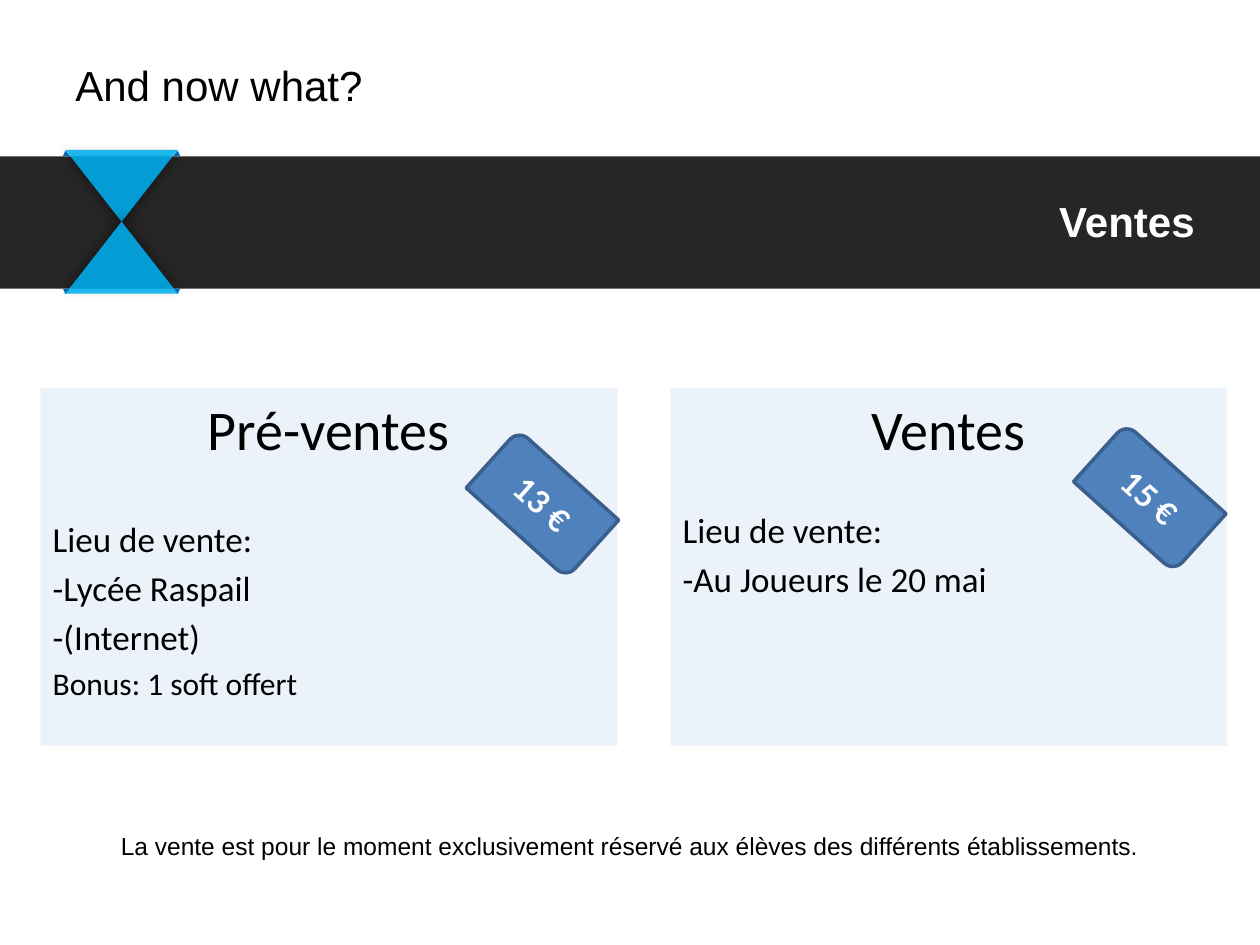
from dataclasses import dataclass

from lxml import etree
from pptx import Presentation, util as u
from pptx.dml.color import RGBColor
from pptx.enum import shapes, text
from pptx.oxml.ns import qn


@dataclass(frozen=True)
class Theme:
    band: str = "262626"
    panel: str = "558ED5"
    ribbon: str = "00B0F0"
    fold: str = "0070C0"
    tag: str = "4F81BD"
    tag_line: str = "3A5F8C"
    dark: str = "000000"
    light: str = "FFFFFF"
    sans: str = "Arial"
    body: str = "Calibri"
    price: str = "Lato"
    title: int = 24
    heading: int = 32
    item: int = 20
    small: int = 18
    note: int = 14


T = Theme()
ALIGN, SHAPE = text.PP_ALIGN, shapes.MSO_SHAPE

prs = Presentation()
prs.slide_width, prs.slide_height = u.Inches(10), u.Inches(7.5)
COL, ROW = prs.slide_width / 10, prs.slide_height / 7.5
s = prs.slides.add_slide(prs.slide_layouts[6])


def paint(sp, color, opacity=100):
    """Flat fill with no outline or shadow; opacity in percent."""
    sp.shadow.inherit = False
    sp.fill.solid()
    sp.fill.fore_color.rgb = RGBColor.from_string(color)
    sp.line.fill.background()
    if opacity < 100:
        clr = sp.fill._xPr.find(qn("a:solidFill"))[0]
        etree.SubElement(clr, qn("a:alpha"), val=str(opacity * 1000))
    return sp


def write(sp, lines, font, color, bold=False, anchor=text.MSO_ANCHOR.MIDDLE):
    """Fill a shape with lines of (words, size, alignment, space before)."""
    tf = sp.text_frame
    tf.word_wrap, tf.vertical_anchor = True, anchor
    for i, (words, size, align, before) in enumerate(lines):
        p = tf.add_paragraph() if i else tf.paragraphs[0]
        p.text, p.alignment, p.space_before = words, align, u.Pt(before)
        p.font.name, p.font.size, p.font.bold = font, u.Pt(size), bold
        p.font.color.rgb = RGBColor.from_string(color)


# Sales panels: left, width, heading, gap under heading, items
panels = [
    (0.32, 4.58, "Pré-ventes", 32, [
        ("Lieu de vente:", T.item), ("-Lycée Raspail", T.item),
        ("-(Internet)", T.item), ("Bonus: 1 soft offert", T.small)]),
    (5.32, 4.42, "Ventes", 27, [
        ("Lieu de vente:", T.item), ("-Au Joueurs le 20 mai", T.item)]),
]
for left, width, heading, gap, items in panels:
    sp = s.shapes.add_shape(SHAPE.RECTANGLE, int(left * COL), int(3.08 * ROW),
                            int(width * COL), int(2.84 * ROW))
    paint(sp, T.panel, 11)
    lines = [(heading, T.heading, ALIGN.CENTER, 0)]
    lines += [(words, size, ALIGN.LEFT, 4 if i else gap)
              for i, (words, size) in enumerate(items)]
    write(sp, lines, T.body, T.dark, anchor=text.MSO_ANCHOR.TOP)

# Title band
band = s.shapes.add_shape(SHAPE.RECTANGLE, 0, int(1.24 * ROW),
                          prs.slide_width, int(1.05 * ROW))
paint(band, T.band)

# Ribbon: four folds mirrored about its centre, then two facing triangles
MID_X, MID_Y = 0.965, 1.765
for side in (-1, 1):
    for end in (-1, 1):
        corners = [((MID_X + side * dx) * COL, (MID_Y + end * dy) * ROW)
                   for dx, dy in ((0.445, 0.57), (0.465, 0.525), (0.41, 0.525))]
        fb = s.shapes.build_freeform(*map(int, corners[0]))
        fb.add_line_segments([tuple(map(int, c)) for c in corners[1:]])
        paint(fb.convert_to_shape(), T.fold)

for top, turn, direction in ((1.19, 180, 90), (1.76, 0, 270)):
    sp = s.shapes.add_shape(SHAPE.ISOSCELES_TRIANGLE, int(0.52 * COL),
                            int(top * ROW), int(0.89 * COL), int(0.57 * ROW))
    sp.rotation = turn
    paint(sp, T.ribbon, 87)
    effects = sp._element.spPr.find(qn("a:effectLst"))
    shadow = etree.SubElement(
        effects, qn("a:outerShdw"), blurRad=str(u.Pt(7)), dist=str(u.Pt(3)),
        dir=str(direction * 60000), rotWithShape="0")
    clr = etree.SubElement(shadow, qn("a:srgbClr"), val=T.dark)
    etree.SubElement(clr, qn("a:alpha"), val="40000")

# Titles and footnote
labels = [
    (2.08, 1.41, 7.5, "Ventes", T.title, ALIGN.RIGHT, T.light, True),
    (0.5, 0.33, 8.5, "And now what?", T.title, ALIGN.LEFT, T.dark, False),
    (0.25, 6.37, 9.5, "La vente est pour le moment exclusivement réservé aux "
     "élèves des différents établissements.", T.note, ALIGN.CENTER, T.dark, False),
]
for left, top, width, words, size, align, color, bold in labels:
    tb = s.shapes.add_textbox(int(left * COL), int(top * ROW),
                              int(width * COL), int(0.68 * ROW))
    write(tb, [(words, size, align, 0)], T.sans, color, bold)

# Price tags
for left, top, price in ((3.77, 3.69, "13 €"), (8.59, 3.64, "15 €")):
    sp = s.shapes.add_shape(SHAPE.ROUND_2_DIAG_RECTANGLE, int(left * COL),
                            int(top * ROW), int(1.07 * COL), int(0.62 * ROW))
    sp.rotation = 42
    paint(sp, T.tag)
    sp.line.color.rgb = RGBColor.from_string(T.tag_line)
    sp.line.width = u.Pt(2)
    write(sp, [(price, T.small, ALIGN.CENTER, 0)], T.price, T.light, True)

prs.save("out.pptx")
